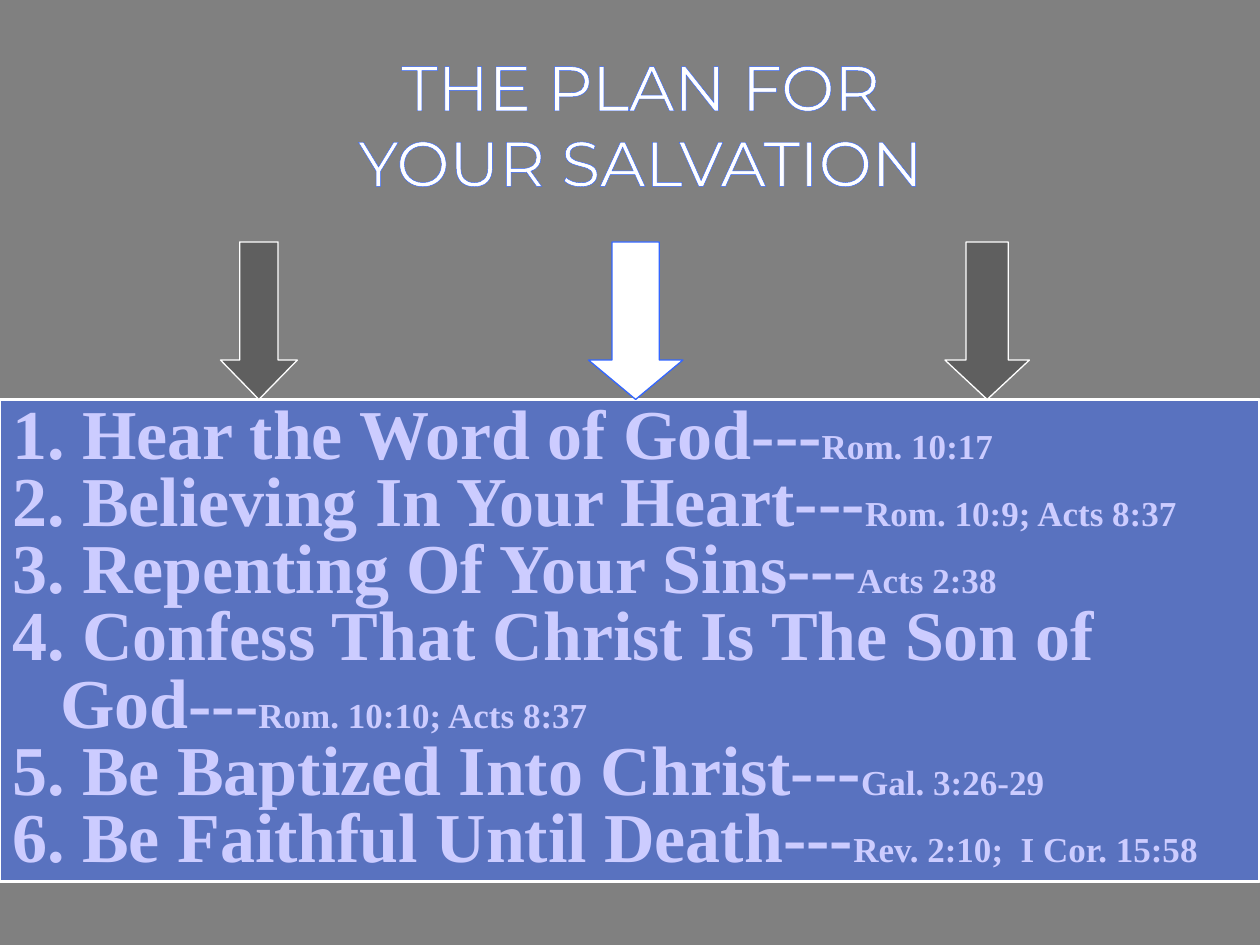
from pptx import Presentation
from pptx.dml.color import RGBColor
from pptx.enum.shapes import MSO_SHAPE
from pptx.enum.text import MSO_ANCHOR, PP_ALIGN
from pptx.util import Inches, Pt
from pptx.oxml import parse_xml
from pptx.oxml.ns import nsdecls
from lxml.etree import SubElement

HUES = {"back": "808080", "blue": "3366FF", "white": "FFFFFF",
        "pale": "CCCCFF", "dark": "5F5F5F"}
WIDE, HIGH = 10, 7.5
STEPS = [
    ("1. Hear the Word of God---", "Rom. 10:17"),
    ("2. Believing In Your Heart---", "Rom. 10:9; Acts 8:37"),
    ("3. Repenting Of Your Sins---", "Acts 2:38"),
    ("4. Confess That Christ Is The Son of God---", "Rom. 10:10; Acts 8:37"),
    ("5. Be Baptized Into Christ---", "Gal. 3:26-29"),
    ("6. Be Faithful Until Death---", "Rev. 2:10;  I Cor. 15:58"),
]
ARROWS = [(1.75, 0.61, "dark", "white"), (7.5, 0.67, "dark", "white"),
          (4.67, 0.75, "white", "blue")]


def color(name):
    """Return the named colour."""
    return RGBColor.from_string(HUES[name])


def add_form(slide, kind, box, fill, line, width):
    """Add a filled and outlined shape in the box."""
    form = slide.shapes.add_shape(kind, *map(Inches, box))
    form.shadow.inherit = False
    form.fill.solid()
    form.fill.fore_color.rgb = color(fill)
    form.line.color.rgb = color(line)
    form.line.width = Pt(width)
    return form


def style(run, size, font, hue, bold=False):
    """Set the look of a run."""
    run.font.size = Pt(size)
    run.font.name = font
    run.font.bold = bold
    run.font.color.rgb = color(hue)


def add_steps(slide, box):
    """Add the panel of numbered steps with their verses."""
    panel = add_form(slide, MSO_SHAPE.RECTANGLE, box, "blue", "white", 1.75)
    tint = panel.fill._xPr.solidFill[0]
    SubElement(tint, tint.tag.replace("srgbClr", "alpha"), val="50000")
    frame = panel.text_frame
    frame.word_wrap = True
    frame.vertical_anchor = MSO_ANCHOR.TOP
    frame.text = "\n".join(step for step, verse in STEPS)
    for para, (step, verse) in zip(frame.paragraphs, STEPS):
        para.alignment = PP_ALIGN.LEFT
        para.line_spacing = 0.8
        props = para._p.get_or_add_pPr()
        props.set("marL", str(Inches(0.38)))
        props.set("indent", str(Inches(-0.38)))
        para.add_run().text = verse
        for run, size in zip(para.runs, (40, 20)):
            style(run, size, "Times New Roman", "pale", True)


def add_title(slide, box):
    """Add the outlined two-line title."""
    frame = slide.shapes.add_textbox(*map(Inches, box)).text_frame
    frame.word_wrap = False
    frame.text = "THE PLAN FOR\nYOUR SALVATION"
    for para in frame.paragraphs:
        para.alignment = PP_ALIGN.CENTER
        run = para.runs[0]
        style(run, 36, "Montserrat", "white")
        run.font._element.insert(0, parse_xml(
            f'<a:ln {nsdecls("a")} w="{Pt(0.75)}"><a:solidFill>'
            f'<a:srgbClr val="{HUES["blue"]}"/></a:solidFill></a:ln>'))


def add_arrows(slide, top, tall):
    """Add the row of down arrows, all with heads a quarter of their height."""
    for left, wide, fill, line in ARROWS:
        arrow = add_form(slide, MSO_SHAPE.DOWN_ARROW, (left, top, wide, tall),
                         fill, line, 0.75)
        arrow.adjustments[1] = tall / 4 / wide


def main():
    """Build and save the slide."""
    deck = Presentation()
    deck.slide_width, deck.slide_height = Inches(WIDE), Inches(HIGH)
    slide = deck.slides.add_slide(deck.slide_layouts[6])
    slide.background.fill.solid()
    slide.background.fill.fore_color.rgb = color("back")
    add_steps(slide, (0, 3.17, WIDE, 3.83))
    add_title(slide, (1.17, 0.33, 7.83, 1.42))
    add_arrows(slide, 1.92, 1.25)
    deck.save("out.pptx")


if __name__ == "__main__":
    main()
